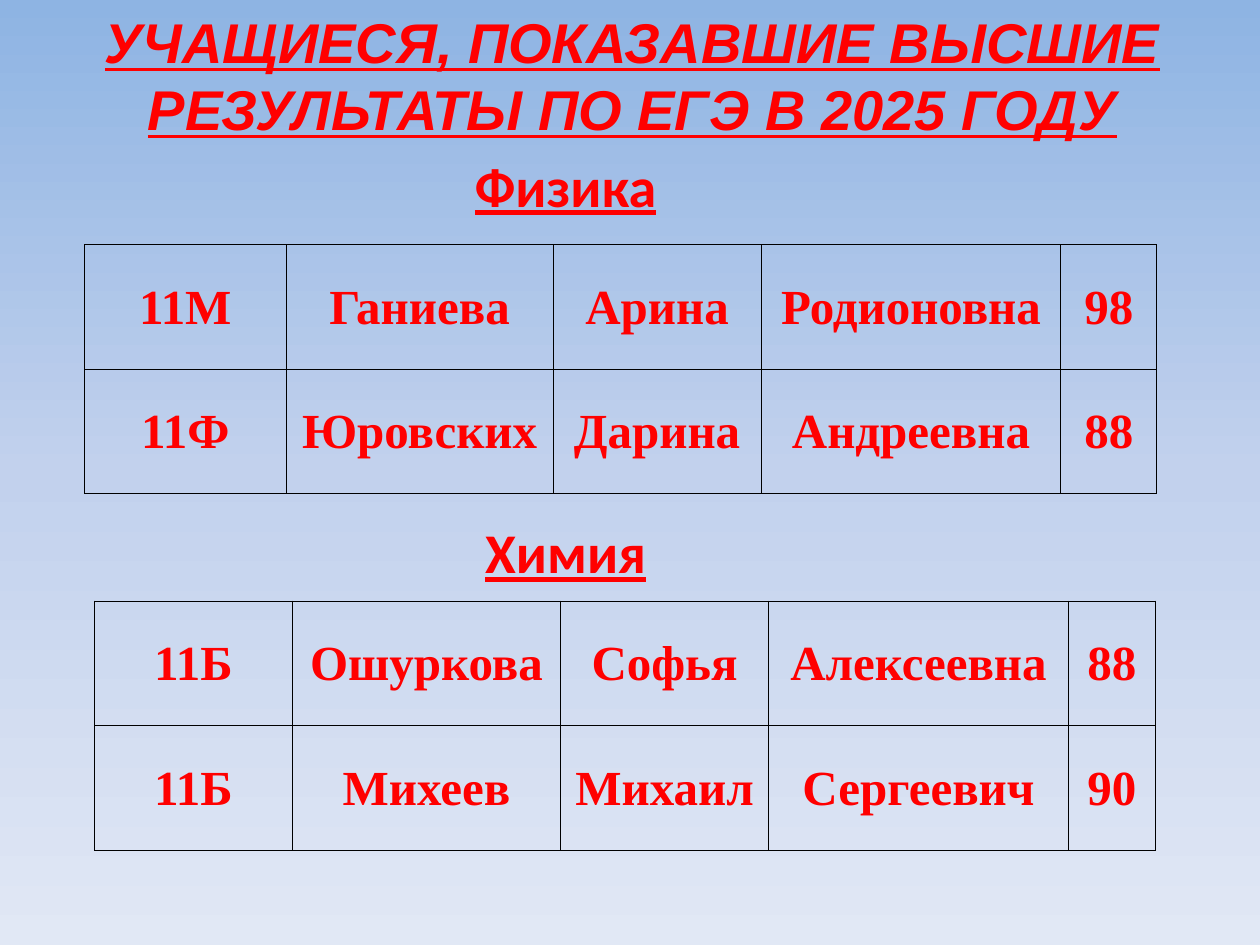
from copy import deepcopy

from lxml.etree import SubElement
from pptx import Presentation
from pptx.dml.color import RGBColor
from pptx.enum.text import MSO_ANCHOR, MSO_AUTO_SIZE, PP_ALIGN
from pptx.oxml.ns import qn
from pptx.util import Inches, Pt

COLORS = {"text": "FF0000", "border": "000000"}
BACKGROUND_STOPS = [(0, "8EB4E3"), (0.5, "C2D1ED"), (1, "E1E8F5")]
TITLE = ["УЧАЩИЕСЯ, ПОКАЗАВШИЕ ВЫСШИЕ", "РЕЗУЛЬТАТЫ ПО ЕГЭ В 2025 ГОДУ"]
ROW_HEIGHT = 0.99
SUBJECTS = [
    {
        "name": "Физика",
        "heading_box": (3.66, 1.15, 1.66, 0.64),
        "table_corner": (0.67, 1.94),
        "columns": [1.6, 2.12, 1.65, 2.38, 0.76],
        "students": [
            ("11М", "Ганиева", "Арина", "Родионовна", 98),
            ("11Ф", "Юровских", "Дарина", "Андреевна", 88),
        ],
    },
    {
        "name": "Химия",
        "heading_box": (3.74, 4.06, 1.5, 0.64),
        "table_corner": (0.75, 4.77),
        "columns": [1.57, 2.13, 1.65, 2.38, 0.69],
        "students": [
            ("11Б", "Ошуркова", "Софья", "Алексеевна", 88),
            ("11Б", "Михеев", "Михаил", "Сергеевич", 90),
        ],
    },
]


def format_text(frame, font_name, size, underline=None, italic=None):
    for paragraph in frame.paragraphs:
        paragraph.alignment = PP_ALIGN.CENTER
        font = paragraph.font
        font.name, font.size = font_name, Pt(size)
        font.bold, font.italic, font.underline = True, italic, underline
        font.color.rgb = RGBColor.from_string(COLORS["text"])


def paint_background(slide):
    fill = slide.background.fill
    fill.gradient()
    fill.gradient_angle = 270
    stop_list = next(slide.element.iter(qn("a:gsLst")))
    stop_list.append(deepcopy(stop_list[-1]))
    for stop, (position, color) in zip(fill.gradient_stops, BACKGROUND_STOPS):
        stop.position = position
        stop.color.rgb = RGBColor.from_string(color)


def add_title(slide):
    title = slide.shapes.title
    title.left, title.top = Inches(0.04), Inches(0)
    title.width, title.height = Inches(9.96), Inches(1.18)
    frame = title.text_frame
    frame.text = "\n".join(TITLE)
    frame.vertical_anchor = MSO_ANCHOR.MIDDLE
    frame.auto_size = MSO_AUTO_SIZE.NONE
    format_text(frame, "Arial", 32, underline=True, italic=True)
    for paragraph in frame.paragraphs:
        paragraph.space_before = Pt(0)


def add_heading(slide, subject):
    box = slide.shapes.add_textbox(*map(Inches, subject["heading_box"]))
    frame = box.text_frame
    frame.word_wrap = False
    frame.auto_size = MSO_AUTO_SIZE.SHAPE_TO_FIT_TEXT
    frame.text = subject["name"]
    format_text(frame, "Calibri", 32, underline=True)


def add_borders(cell):
    properties = cell._tc.get_or_add_tcPr()
    for side in ("lnL", "lnR", "lnT", "lnB"):
        line = SubElement(properties, qn(f"a:{side}"), w=str(Pt(0.5)))
        fill = SubElement(line, qn("a:solidFill"))
        SubElement(fill, qn("a:srgbClr"), val=COLORS["border"])


def add_results(slide, subject):
    students, columns = subject["students"], subject["columns"]
    left, top = subject["table_corner"]
    size = (sum(columns), ROW_HEIGHT * len(students))
    table = slide.shapes.add_table(
        len(students), len(columns), *map(Inches, (left, top, *size))
    ).table
    table.first_row = table.horz_banding = False
    for column, width in zip(table.columns, columns):
        column.width = Inches(width)
    for row, student in zip(table.rows, students):
        row.height = Inches(ROW_HEIGHT)
        for cell, value in zip(row.cells, student):
            cell.text = str(value)
            cell.vertical_anchor = MSO_ANCHOR.MIDDLE
            cell.margin_left = cell.margin_right = cell.margin_top = Inches(0.01)
            cell.margin_bottom = Inches(0)
            add_borders(cell)
            cell.fill.background()
            format_text(cell.text_frame, "Times New Roman", 28)


def main():
    presentation = Presentation()
    presentation.slide_width, presentation.slide_height = Inches(10), Inches(7.5)
    title_only = presentation.slide_layouts.get_by_name("Title Only")
    slide = presentation.slides.add_slide(title_only)
    paint_background(slide)
    add_title(slide)
    for subject in SUBJECTS:
        add_results(slide, subject)
        add_heading(slide, subject)
    presentation.save("out.pptx")


if __name__ == "__main__":
    main()
